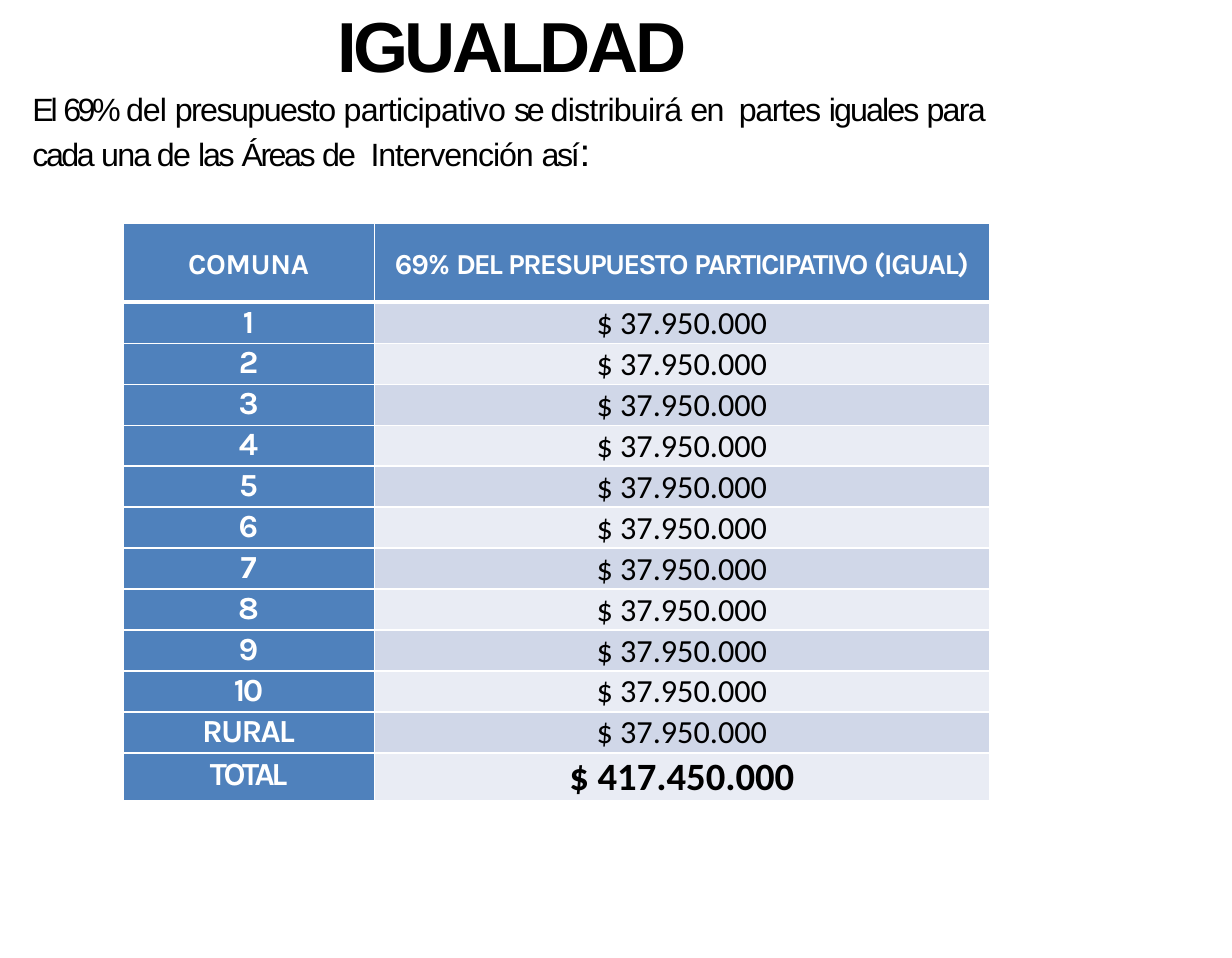
from lxml import etree
from pptx import Presentation
from pptx.dml.color import RGBColor
from pptx.enum.text import MSO_ANCHOR, MSO_AUTO_SIZE, PP_ALIGN
from pptx.oxml.ns import qn
from pptx.util import Inches, Pt

CENTER, LEFT = PP_ALIGN.CENTER, PP_ALIGN.LEFT
TOP, MIDDLE = MSO_ANCHOR.TOP, MSO_ANCHOR.MIDDLE
FIT_SHAPE = MSO_AUTO_SIZE.SHAPE_TO_FIT_TEXT
TITLE_ONLY = 5

COLORS = {"blue": "4F81BC", "dark_band": "D0D7E8", "light_band": "E9ECF4",
          "white": "FFFFFF", "black": "000000"}

# Each piece of text comes with its letter spacing in points
INTRO = [("El ", -2.1), ("69% ", -2.2), ("del ", -0.7), ("presupuesto ", -1),
         ("participativo ", -0.5), ("se ", -2), ("distribuirá ", -0.5),
         ("en", -1.1), (" ", 3.4), ("partes ", -0.9), ("iguales ", -1.2),
         ("para ", -1.1), ("cada ", -1.6), ("una de ", -1.1), ("las ", -1.4),
         ("Áreas ", -1.6), ("de", -1.1), (" ", 3.4), ("Intervención ", -0.7),
         ("así", -1.5)]
HEADERS = [[("COMUNA", -0.2)],
           [("69% ", -0.7), ("DEL ", -1.4), ("PRESUPUESTO ", -1.1),
            ("PARTICIPATIVO ", -1.2), ("(IGUAL)", -0.9)]]
COMMUNES = [(str(number), 0) for number in range(1, 10)]
COMMUNES += [("10", -1.6), ("RURAL", -1.1)]
SHARE, TOTAL = "$ 37.950.000", "$ 417.450.000"


def rgb(name):
    return RGBColor.from_string(COLORS[name])


def add_span(para, text, size, font="Arial", color="black", bold=False, spacing=0):
    span = para.add_run()
    span.text = text
    span.font.size = Pt(size)
    span.font.name = font
    span.font.bold = bold
    span.font.color.rgb = rgb(color)
    span.font._element.set("spc", str(round(spacing * 100)))


def add_border(cell, side, width):
    line = etree.SubElement(cell._tc.get_or_add_tcPr(), qn(f"a:ln{side}"),
                            w=str(Pt(width)))
    fill = etree.SubElement(line, qn("a:solidFill"))
    etree.SubElement(fill, qn("a:srgbClr"), val=COLORS["white"])


def fill_cell(cell, pieces, fill, top=0.01, side=0, anchor=TOP,
              border_top=1, border_bottom=1, **style):
    cell.margin_left = cell.margin_right = Inches(side)
    cell.margin_top, cell.margin_bottom = Inches(top), 0
    cell.vertical_anchor = anchor
    for edge, width in zip("LRTB", (1, 1, border_top, border_bottom)):
        add_border(cell, edge, width)
    cell.fill.solid()
    cell.fill.fore_color.rgb = rgb(fill)
    para = cell.text_frame.paragraphs[0]
    para.alignment = CENTER
    for text, spacing in pieces:
        add_span(para, text, spacing=spacing, **style)


def place_title(title, left, top, width, height):
    title.left, title.top, title.width, title.height = left, top, width, height
    frame = title.text_frame
    frame.margin_left = frame.margin_right = frame.margin_bottom = 0
    frame.margin_top = Inches(0.01)
    frame.word_wrap = True
    frame.auto_size = FIT_SHAPE
    frame.vertical_anchor = MIDDLE

    heading = frame.paragraphs[0]
    heading.alignment = CENTER
    add_span(heading, "IGUALDAD", 44, bold=True, spacing=-2.2)

    intro = frame.add_paragraph()
    intro.alignment = LEFT
    intro.space_before = Pt(1.1)
    for text, spacing in INTRO:
        add_span(intro, text, 20, spacing=spacing)
    add_span(intro, ":", 24, spacing=-1.5)


def add_budget_table(slide, left, top, width, height):
    row_count = len(COMMUNES) + 2
    table = slide.shapes.add_table(row_count, 2, left, top, width, height).table
    table.columns[0].width = round(width * 0.29)
    table.columns[1].width = width - table.columns[0].width

    # The header and total rows are taller; the rest share what is left
    header_height, total_height = Inches(0.68), Inches(0.4)
    body_height = (height - header_height - total_height) // len(COMMUNES)
    heights = [header_height] + [body_height] * len(COMMUNES) + [total_height]
    for row, row_height in zip(table.rows, heights):
        row.height = row_height

    for column, pieces in enumerate(HEADERS):
        fill_cell(table.cell(0, column), pieces, "blue", top=0.21, border_bottom=3,
                  size=18, font="Karla", color="white", bold=True)

    for index, label in enumerate(COMMUNES + [("TOTAL", -2.1)], start=1):
        is_total = index == row_count - 1
        border_top = 3 if index == 1 else 1
        fill_cell(table.cell(index, 0), [label], "blue",
                  top=0.03 if is_total else 0.01, border_top=border_top,
                  size=20, font="Karla", color="white", bold=True)
        fill_cell(table.cell(index, 1), [(TOTAL if is_total else SHARE, 0)],
                  "dark_band" if index % 2 else "light_band",
                  side=0.01, anchor=MIDDLE, border_top=border_top,
                  size=24 if is_total else 20, font="Calibri", bold=is_total)


def main():
    deck = Presentation()
    deck.slide_width, deck.slide_height = Inches(10.63), Inches(8.27)
    page = deck.slides.add_slide(deck.slide_layouts[TITLE_ONLY])
    place_title(page.shapes.title, Inches(0.28), 0, Inches(8.27), Inches(1.51))
    add_budget_table(page, Inches(1.06), Inches(1.93), Inches(7.48), Inches(4.97))
    deck.save("out.pptx")


if __name__ == "__main__":
    main()
